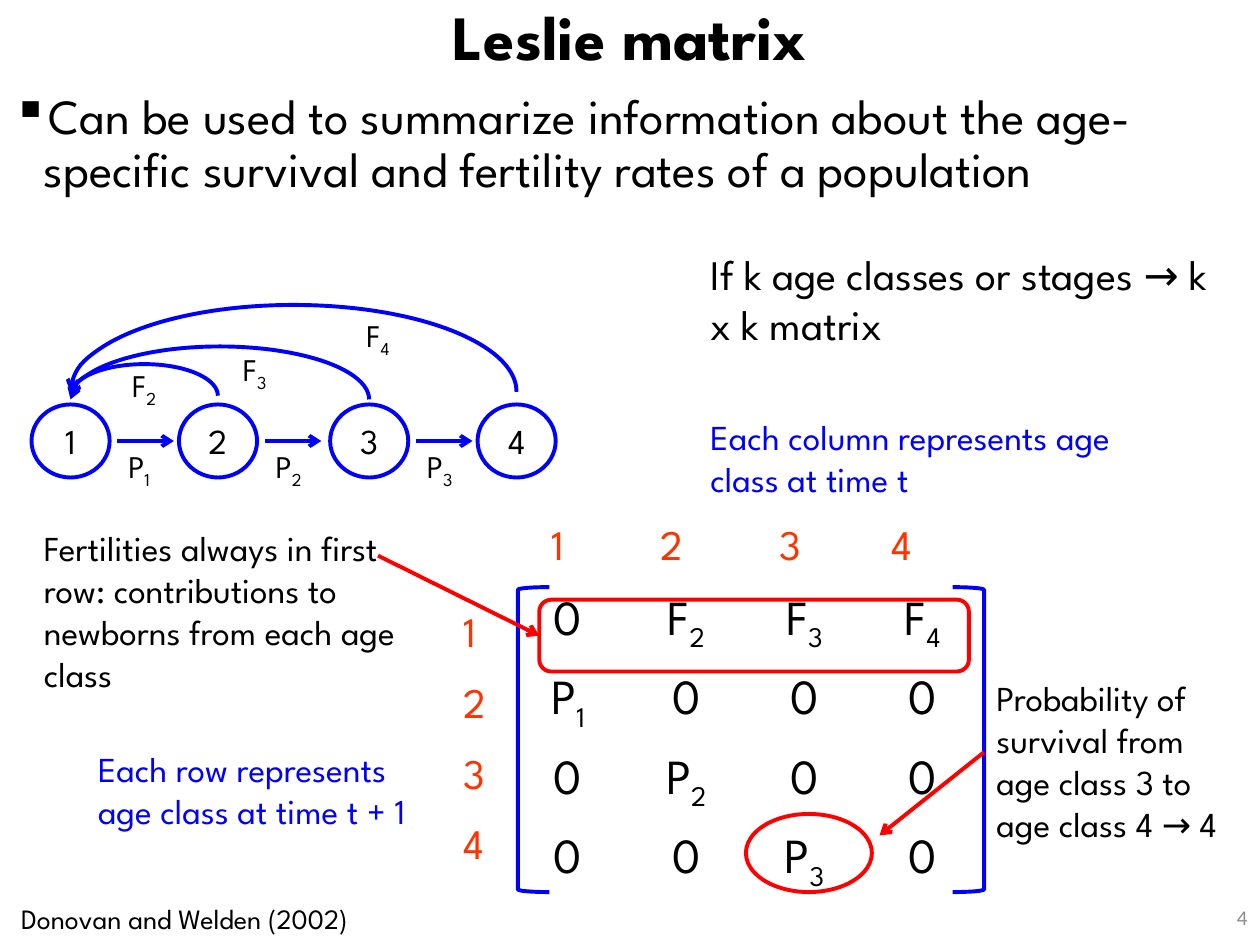
from dataclasses import dataclass
from lxml.etree import SubElement
from pptx import Presentation
from pptx.dml.color import RGBColor
from pptx.enum.shapes import MSO_CONNECTOR, MSO_SHAPE
from pptx.enum.text import MSO_ANCHOR, MSO_AUTO_SIZE, PP_ALIGN
from pptx.oxml.ns import qn
from pptx.util import Inches, Pt


@dataclass(frozen=True)
class Theme:
    font: str = "League Spartan"
    plain: str = "Calibri"
    black: str = "000000"
    blue: str = "0000FF"
    red: str = "FF0000"
    orange: str = "FF3300"
    gray: str = "8C8C8C"
    title: int = 36
    body: int = 28
    head: int = 24
    note: int = 20
    label: int = 18
    cite: int = 16
    page: int = 12
    line: float = 2.25


class Deck:
    def __init__(self, theme, slide):
        self.theme = theme
        self.slide = slide
        self.shapes = slide.shapes

    def letter(self, frame, text, size, color=None, font=None, bold=False, align=None):
        para = frame.paragraphs[0]
        para.alignment = align
        base, _, sub = text.partition("_")
        para.text = base
        if sub:
            para.add_run().text = sub
        for run in para.runs:
            run.font.name = font or self.theme.font
            run.font.size = Pt(size)
            run.font.bold = bold
            run.font.color.rgb = RGBColor.from_string(color or self.theme.black)
        if sub:
            para.runs[1].font._element.set("baseline", "-25000")
        return para

    def text(self, text, box, size, wrap=True, fit=True, anchor=MSO_ANCHOR.TOP, **style):
        frame = self.shapes.add_textbox(*map(Inches, box)).text_frame
        frame.word_wrap = wrap
        frame.auto_size = MSO_AUTO_SIZE.SHAPE_TO_FIT_TEXT if fit else MSO_AUTO_SIZE.NONE
        frame.vertical_anchor = anchor
        return self.letter(frame, text, size, **style)

    def bullet(self, text, box, size):
        para = self.text(text, box, size, fit=False)
        para.line_spacing = 0.9
        para.space_before = Pt(10)
        props = para._p.get_or_add_pPr()
        props.set("marL", str(Inches(0.25)))
        props.set("indent", str(-Inches(0.25)))
        SubElement(props, qn("a:buChar"), char="▪")

    def stroke(self, item, color, **ends):
        item.line.color.rgb = RGBColor.from_string(color)
        item.line.width = Pt(self.theme.line)
        for end, kind in ends.items():
            SubElement(item.line._get_or_add_ln(), qn(f"a:{end}"), type=kind)

    def shape(self, kind, box, color, **ends):
        item = self.shapes.add_shape(kind, *map(Inches, box))
        item.shadow.inherit = False
        item.fill.background()
        self.stroke(item, color, **ends)
        return item

    def ring(self, text, box, color):
        frame = self.shape(MSO_SHAPE.OVAL, box, color).text_frame
        frame.margin_left = frame.margin_right = 0
        frame.margin_top = frame.margin_bottom = 0
        frame.vertical_anchor = MSO_ANCHOR.MIDDLE
        self.letter(frame, text, self.theme.note, align=PP_ALIGN.CENTER)

    def arc(self, box, color):
        item = self.shape(MSO_SHAPE.ARC, box, color, headEnd="arrow")
        item.adjustments[0] = 108
        item.adjustments[1] = 0

    def arrow(self, start, end, color):
        item = self.shapes.add_connector(MSO_CONNECTOR.STRAIGHT, *map(Inches, start + end))
        self.stroke(item, color, tailEnd="arrow")
        SubElement(item._element.spPr, qn("a:effectLst"))
        return item

    def table(self, rows, box):
        grid = self.shapes.add_table(len(rows), len(rows[0]), *map(Inches, box)).table
        grid.first_row = grid.horz_banding = False
        for r, row in enumerate(rows):
            for c, text in enumerate(row):
                cell = grid.cell(r, c)
                cell.fill.background()
                self.letter(cell.text_frame, text, self.theme.body, align=PP_ALIGN.CENTER)
                props = cell._tc.get_or_add_tcPr()
                for i, side in enumerate(("lnL", "lnR", "lnT", "lnB")):
                    edge = props.makeelement(qn(f"a:{side}"), {"w": "0"})
                    SubElement(edge, qn("a:noFill"))
                    props.insert(i, edge)


def main():
    show = Presentation()
    show.slide_width, show.slide_height = Inches(10), Inches(7.5)
    look = Theme()
    deck = Deck(look, show.slides.add_slide(show.slide_layouts[6]))

    title = deck.text("Leslie matrix", (0, 0.01, 10, 0.62), look.title, fit=False,
                      anchor=MSO_ANCHOR.MIDDLE, bold=True, align=PP_ALIGN.CENTER)
    title.line_spacing = 0.9
    deck.bullet("Can be used to summarize information about the age-specific "
                "survival and fertility rates of a population",
                (0, 0.68, 10, 5.67), look.body)

    rings = (0.25, 1.42, 2.62, 3.79)
    wide, high, top = 0.62, 0.58, 3.21
    mid = top + high / 2
    for n, x in enumerate(rings, 1):
        deck.ring(str(n), (x, top, wide, high), look.blue)
    for n, x in enumerate(rings[:-1], 1):
        deck.arrow((x + 0.68, mid), (x + 1.13, mid), look.blue)
        deck.text(f"P_{n}", (x + 0.67, mid, 0.47, 0.4), look.label, wrap=False)
    arcs = ((2.89, 0.5, 0.95, 2.86), (2.75, 0.84, 1.83, 2.73), (2.42, 1.38, 2.81, 2.46))
    for n, (y, tall, left, up) in enumerate(arcs, 2):
        deck.arc((rings[0] + wide / 2, y, rings[n - 1] - rings[0], tall), look.blue)
        deck.text(f"F_{n}", (left, up, 0.45, 0.4), look.label, wrap=False)

    deck.table((("0", "F_2", "F_3", "F_4"),
                ("P_1", "0", "0", "0"),
                ("0", "P_2", "0", "0"),
                ("0", "0", "P_3", "0")), (4.04, 4.72, 3.75, 2.27))
    for x, kind in ((4.11, MSO_SHAPE.LEFT_BRACKET), (7.56, MSO_SHAPE.RIGHT_BRACKET)):
        deck.shape(kind, (x, 4.66, 0.25, 2.42), look.blue)
    for n, x in enumerate((4.28, 5.14, 6.09, 6.98), 1):
        for spot in ((x, 4.07), (3.58, 4.2 + 0.56 * n)):
            deck.text(str(n), (*spot, 0.4, 0.5), look.head, wrap=False, color=look.orange)

    deck.text("If k age classes or stages → k x k matrix", (5.54, 1.92, 4.21, 0.91), look.head)
    notes = (
        ("Each column represents age class at time t", (5.54, 3.25, 3.62, 0.77), look.blue),
        ("Each row represents age class at time t + 1", (0.68, 5.88, 2.67, 1.11), look.blue),
        ("Probability of survival from age class 3 to age class 4 → 4",
         (7.81, 5.32, 2.02, 1.78), look.black),
        ("Fertilities always in first row: contributions to newborns from each age class",
         (0.25, 4.13, 3.02, 1.78), look.black),
    )
    for text, box, color in notes:
        deck.text(text, box, look.note, color=color)

    deck.shape(MSO_SHAPE.OVAL, (5.92, 6.46, 1, 0.62), look.red)
    deck.arrow((7.81, 5.97), (6.98, 6.63), look.red)
    frame = deck.shape(MSO_SHAPE.ROUNDED_RECTANGLE, (4.28, 4.76, 3.41, 0.57), look.red)
    deck.arrow((3, 4.41), (4.28, 5.04), look.red).end_connect(frame, 1)

    deck.text("4", (7.75, 7.08, 2.25, 0.4), look.page, fit=False, anchor=MSO_ANCHOR.MIDDLE,
              color=look.gray, font=look.plain, align=PP_ALIGN.RIGHT)
    deck.text("Donovan and Welden (2002)", (0.07, 7.11, 3.23, 0.37), look.cite, wrap=False)
    show.save("out.pptx")


if __name__ == "__main__":
    main()
